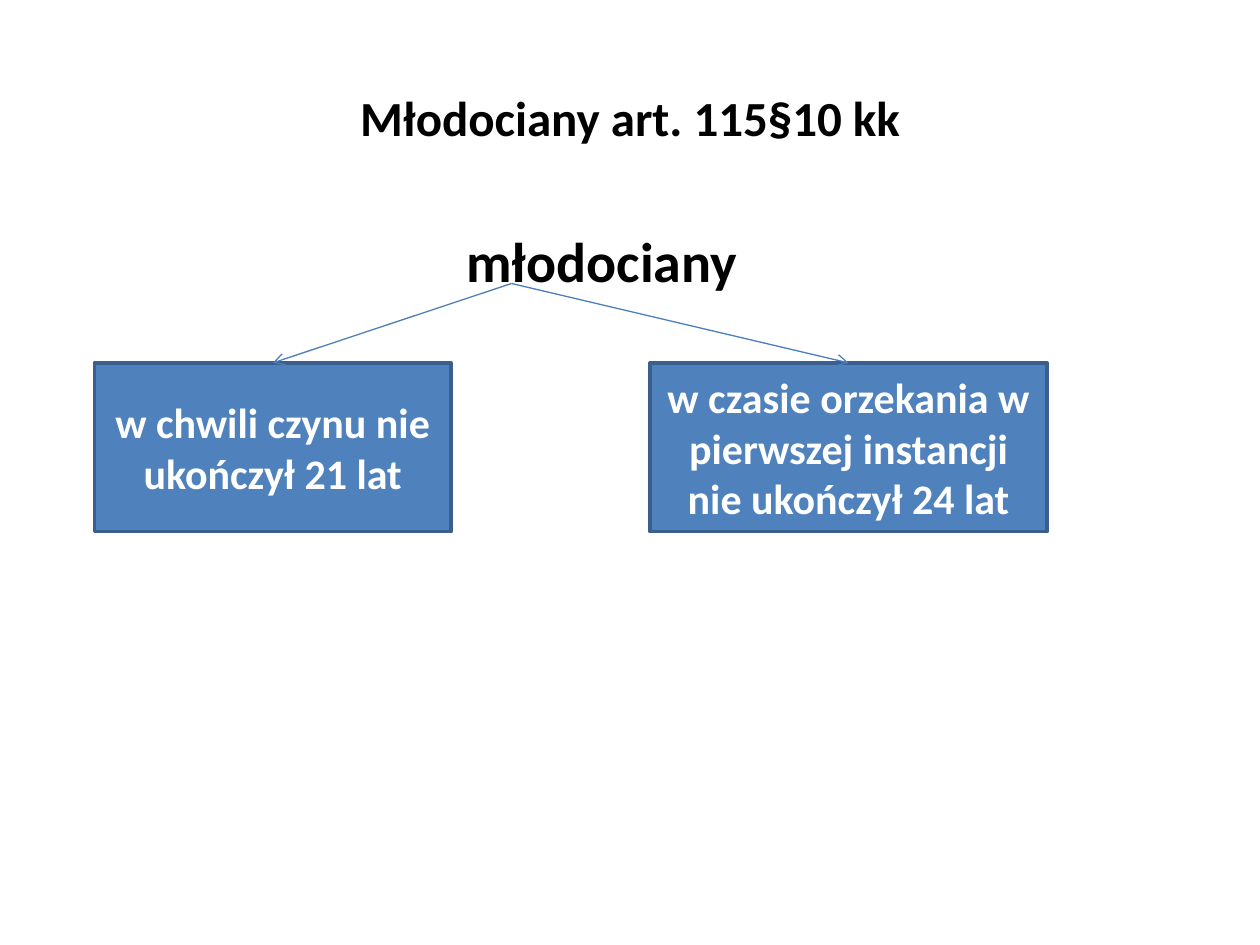
from lxml.etree import SubElement
from pptx import Presentation
from pptx.dml.color import RGBColor as Color
from pptx.enum.shapes import MSO_CONNECTOR as Connector, MSO_SHAPE as Shape
from pptx.enum.text import MSO_ANCHOR as Anchor, PP_ALIGN as Align
from pptx.oxml.ns import qn
from pptx.util import Inches, Pt

THEME = {
    "font": "Calibri",
    "ink": Color.from_string("000000"),
    "box_text": Color.from_string("FFFFFF"),
    "box_fill": Color.from_string("4F81BD"),
    "box_line": Color.from_string("3A5F8C"),
    "arrow": Color.from_string("4B7EBC"),
    "title_size": Pt(28),
    "term_size": Pt(32),
    "box_size": Pt(24),
}

deck = Presentation()
deck.slide_width, deck.slide_height = Inches(10), Inches(7.5)
column, row = deck.slide_width / 20, deck.slide_height / 30
page = deck.slides.add_slide(deck.slide_layouts[1])


def place(shape, left, top, width, height):
    shape.left, shape.width = round(left * column), round(width * column)
    shape.top, shape.height = round(top * row), round(height * row)


def write(shape, text, size, color, align):
    shape.text_frame.text = text
    para = shape.text_frame.paragraphs[0]
    para.alignment = align
    para.space_before = Pt(0)
    font = para.runs[0].font
    font.name, font.size, font.bold = THEME["font"], THEME[size], True
    font.color.rgb = THEME[color]
    return para


title = page.shapes.title
place(title, 1, 1.2, 18, 5)
title.text_frame.vertical_anchor = Anchor.MIDDLE
write(title, "Młodociany art. 115§10 kk", "title_size", "ink", Align.CENTER)

body = page.placeholders[1]
place(body, 1, 7, 18, 19.8)
term = write(body, "młodociany", "term_size", "ink", Align.LEFT)
term_format = term._p.get_or_add_pPr()
term_format.set("marL", str(round(6.2 * column)))
term_format.set("indent", "0")
SubElement(term_format, qn("a:buNone"))

conditions = [
    ("w chwili czynu nie ukończył 21 lat", 1.5, 5.66),
    ("w czasie orzekania w pierwszej instancji nie ukończył 24 lat", 10.32, 6.3),
]
boxes = []
for text, left, width in conditions:
    box = page.shapes.add_shape(Shape.FLOWCHART_PROCESS, 0, 0, 0, 0)
    place(box, left, 11.52, width, 5.36)
    box.shadow.inherit = False
    box.fill.solid()
    box.fill.fore_color.rgb = THEME["box_fill"]
    box.line.color.rgb = THEME["box_line"]
    box.line.width = Pt(2)
    box.text_frame.word_wrap = True
    box.text_frame.vertical_anchor = Anchor.MIDDLE
    write(box, text, "box_size", "box_text", Align.CENTER)
    boxes.append(box)

for box in boxes:
    arrow = page.shapes.add_connector(
        Connector.STRAIGHT, round(8.12 * column), round(9 * row), 0, 0
    )
    arrow.end_connect(box, 0)
    arrow.line.color.rgb = THEME["arrow"]
    arrow.line.width = Pt(0.75)
    SubElement(arrow.line._get_or_add_ln(), qn("a:tailEnd"), type="arrow")
    SubElement(arrow._element.spPr, qn("a:effectLst"))

deck.save("out.pptx")
